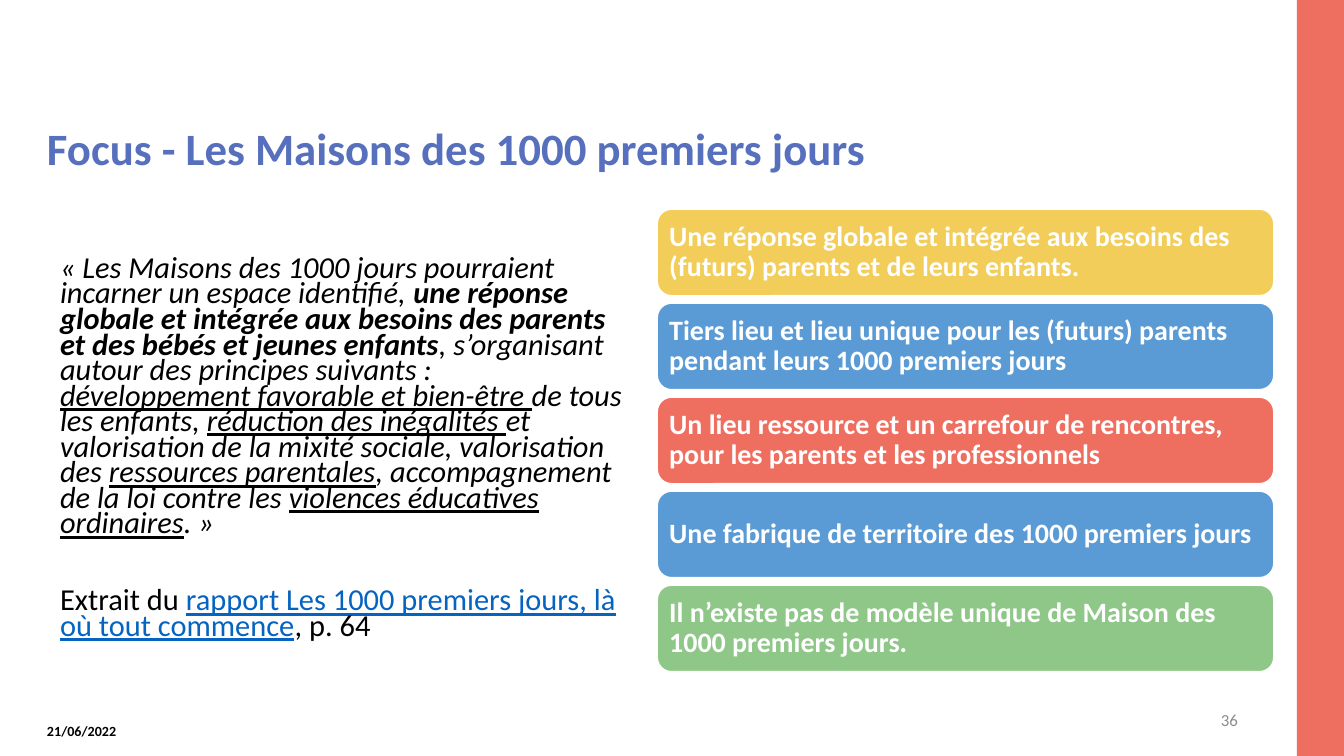
"""Build the slide on the houses of the first 1000 days."""
from pptx import Presentation, util as u
from pptx.dml.color import RGBColor
from pptx.enum import shapes, text

HUES = {"white": "FFFFFF", "black": "000000", "gray": "8C8C8C", "title": "5770BE",
        "link": "0563C1", "gold": "F2CD5A", "blue": "5B9BD5", "coral": "EE6E60",
        "green": "8FC788"}
CARDS = [
    ("gold", "Une réponse globale et intégrée aux besoins des (futurs) parents et de leurs enfants."),
    ("blue", "Tiers lieu et lieu unique pour les (futurs) parents pendant leurs 1000 premiers jours"),
    ("coral", "Un lieu ressource et un carrefour de rencontres, pour les parents et les professionnels"),
    ("blue", "Une fabrique de territoire des 1000 premiers jours"),
    ("green", "Il n’existe pas de modèle unique de Maison des 1000 premiers jours."),
]
ITAL = {"italic": True}
BOLD = {"italic": True, "bold": True}
LINE = {"italic": True, "underline": True}
QUOTE = [
    ("« Les Maisons des 1000 jours pourraient incarner un espace identifié, ", ITAL),
    ("une réponse globale et intégrée aux besoins des parents et des bébés et jeunes enfants", BOLD),
    (", s’organisant autour des principes suivants : ", ITAL),
    ("développement favorable et bien-être ", LINE),
    ("de tous les enfants, ", ITAL),
    ("réduction des inégalités ", LINE),
    ("et valorisation de la mixité sociale, valorisation des ", ITAL),
    ("ressources parentales", LINE),
    (", accompagnement de la loi contre les ", ITAL),
    ("violences éducatives ordinaires", LINE),
    (". »", ITAL),
]
CREDIT = [
    ("Extrait du ", {}),
    ("rapport Les 1000 premiers jours, là où tout commence", {"hue": "link", "underline": True}),
    (", p. 64", {}),
]


def px(n):
    return u.Emu(round(n * 914400 / 134.4))


def rgb(hue):
    return RGBColor.from_string(HUES[hue])


def put(obj, vals):
    for name, val in vals.items():
        setattr(obj, name, val)


class Deck:
    """Hold the style and the current slide."""

    def __init__(self, wide, high, font):
        self.show = Presentation()
        put(self.show, {"slide_width": px(wide), "slide_height": px(high)})
        self.slide = self.show.slides.add_slide(self.show.slide_layouts[6])
        self.font = font

    def fill_para(self, para, runs, size, hue, form):
        put(para, form)
        for words, look in runs:
            run = para.add_run()
            run.text = words
            look = {"hue": hue, **look}
            run.font.color.rgb = rgb(look.pop("hue"))
            put(run.font, {"name": self.font, "size": u.Pt(size), **look})

    def frame(self, item, pads, anchor=text.MSO_ANCHOR.MIDDLE):
        sides = ("margin_left", "margin_top", "margin_right", "margin_bottom")
        put(item.text_frame, {"word_wrap": True, "vertical_anchor": anchor,
                              **dict(zip(sides, map(px, pads)))})
        return item.text_frame

    def label(self, box, words, size, hue, pads, look, form):
        item = self.slide.shapes.add_textbox(*map(px, box))
        self.fill_para(self.frame(item, pads).paragraphs[0], [(words, look)], size, hue, form)

    def body(self, box, paras, size):
        item = self.slide.shapes.add_textbox(*map(px, box))
        frame = self.frame(item, (13, 7, 13, 7), text.MSO_ANCHOR.TOP)
        for i, (runs, gap) in enumerate(paras):
            para = frame.add_paragraph() if i else frame.paragraphs[0]
            self.fill_para(para, runs, size, "black",
                           {"line_spacing": 0.7, "space_before": u.Pt(gap)})

    def block(self, kind, box, hue):
        item = self.slide.shapes.add_shape(kind, *map(px, box))
        item.shadow.inherit = False
        item.fill.solid()
        item.fill.fore_color.rgb = rgb(hue)
        item.line.fill.background()
        return item

    def card(self, box, hue, words):
        item = self.block(shapes.MSO_SHAPE.ROUNDED_RECTANGLE, box, hue)
        item.line.color.rgb = rgb("white")
        item.line.width = u.Pt(1)
        self.fill_para(self.frame(item, (8, 8, 8, 8)).paragraphs[0], [(words, {"bold": True})],
                       15, "white", {"line_spacing": 0.9, "alignment": text.PP_ALIGN.LEFT})


def main():
    deck = Deck(1344, 756, "Calibri")
    deck.label((949, 700, 302, 40), "36", 9, "gray", (13, 7, 13, 7), {},
               {"alignment": text.PP_ALIGN.RIGHT})
    deck.label((47, 706, 172, 50), "21/06/2022", 7.5, "black", (0, 0, 0, 0),
               {"bold": True}, {})
    for i, (hue, words) in enumerate(CARDS):
        deck.card((657, 209 + 94 * i, 617, 87), hue, words)
    deck.label((35, 87, 1238, 128), "Focus - Les Maisons des 1000 premiers jours", 24,
               "title", (12, 5, 9, 5), {"bold": True}, {"line_spacing": 0.9})
    deck.body((47, 251, 589, 384), [(QUOTE, 7.5), (CREDIT, 27.5)], 16.3)
    deck.block(shapes.MSO_SHAPE.RECTANGLE, (1297, 0, 47, 756), "coral")
    deck.show.save("out.pptx")


if __name__ == "__main__":
    main()
